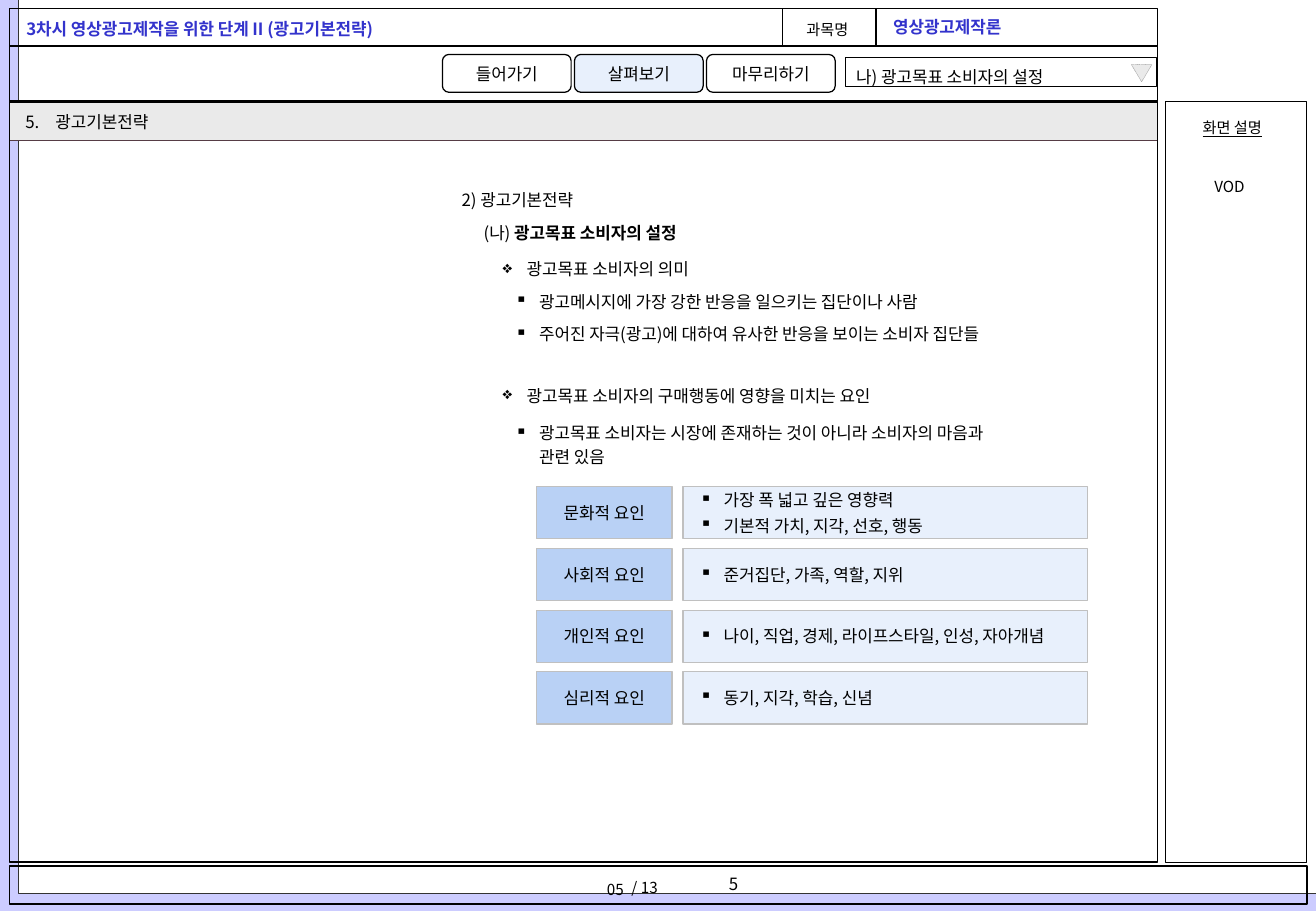
from dataclasses import dataclass
from typing import Optional

import pptx
import pptx.dml.color
import pptx.enum.dml
import pptx.enum.shapes
import pptx.enum.text
import pptx.oxml.ns
import pptx.util
from lxml import etree

Cm = pptx.util.Cm
Pt = pptx.util.Pt
RGBColor = pptx.dml.color.RGBColor
SHAPE = pptx.enum.shapes.MSO_SHAPE
ALIGN = pptx.enum.text.PP_ALIGN
ANCHOR = pptx.enum.text.MSO_ANCHOR
qn = pptx.oxml.ns.qn

FONT = "Noto Sans CJK KR"
BLACK = RGBColor(0x00, 0x00, 0x00)
WHITE = RGBColor(0xFF, 0xFF, 0xFF)
LAVENDER = RGBColor(0xCC, 0xCC, 0xFF)
CHARCOAL = RGBColor(0x33, 0x33, 0x33)
INDIGO = RGBColor(0x33, 0x33, 0xCC)
LIGHT_GRAY = RGBColor(0xEA, 0xEA, 0xEA)
MID_GRAY = RGBColor(0x96, 0x96, 0x96)
SILVER = RGBColor(0xC0, 0xC0, 0xC0)
PLUM = RGBColor(0x56, 0x3C, 0x45)
PALE_BLUE = RGBColor(0xE8, 0xF0, 0xFC)
SKY_BLUE = RGBColor(0xB9, 0xD1, 0xF5)
TIGHT, LOOSE = Pt(12), Pt(14.2)


@dataclass
class Box:
    left: float
    top: float
    width: float
    height: float
    fill: Optional[RGBColor] = None
    line: Optional[RGBColor] = BLACK
    weight: float = 1
    kind: int = SHAPE.RECTANGLE


@dataclass
class Style:
    size: float = 10
    color: RGBColor = BLACK
    bold: bool = False
    underline: bool = False
    align: int = ALIGN.LEFT
    spacing: int = TIGHT
    before: float = 5
    bullet: Optional[str] = None
    number: Optional[int] = None
    hanging: float = 0.5


@dataclass
class Label:
    left: float
    top: float
    width: float
    height: float
    lines: list[str]
    style: Style
    wrap: bool = True
    right_inset: float = 0.25
    bold_tail: str = ""


PANELS = [
    Box(0, 0, 27.51, 19.05, LAVENDER, None),
    Box(0.38, -0.18, 27.33, 18.87, WHITE, CHARCOAL, 0.75),
    Box(0.2, 2.13, 24, 0.81, LIGHT_GRAY, PLUM, 0.25),
    Box(0.2, 18.11, 27.13, 0.79),
    Box(0.2, 2.13, 24, 15.9),
    Box(24.36, 2.13, 2.95, 15.9, weight=0.75),
    Box(0.2, 0.18, 24, 0.79),
    Box(16.36, 0.18, 1.96, 0.79),
    Box(0.2, 0.97, 24, 1.14),
    Box(17.68, 1.19, 6.5, 0.61, WHITE, BLACK, 0.25),
]

TITLE = "3차시 영상광고제작을 위한 단계 II (광고기본전략)"
HEADING = Style(color=INDIGO, bold=True)
COURSE = Style(color=INDIGO, bold=True, spacing=LOOSE)
BODY = Style(spacing=LOOSE)
DIAMOND = Style(spacing=LOOSE, bullet="❖")
SQUARE = Style(spacing=LOOSE, bullet="▪")
CENTERED = Style(align=ALIGN.CENTER)
FACTOR = Style(bullet="▪", before=3)

LABELS = [
    Label(24.89, 2.31, 1.96, 0.64, ["화면 설명"], Style(9, underline=True), False),
    Label(14.99, 18.14, 1.4, 0.69, ["5"], Style(), False),
    Label(12.88, 18.19, 1.12, 0.64, ["/ 13"], Style(9, align=ALIGN.RIGHT), False),
    Label(12.37, 18.16, 0.99, 0.71, ["05"],
          Style(9, align=ALIGN.CENTER, spacing=LOOSE)),
    Label(18.42, 0.15, 5.74, 0.79, ["영상광고제작론"], COURSE),
    Label(16.61, 0.25, 1.47, 0.64, ["과목명"], Style(9), False),
    Label(24, 3.53, 3.15, 0.64, ["VOD"], Style(9, align=ALIGN.CENTER),
          right_inset=0),
    Label(17.65, 1.18, 6, 0.76, ["나) 광고목표 소비자의 설정"], BODY),
    Label(0.28, 2.13, 14.07, 0.76, ["광고기본전략"],
          Style(spacing=LOOSE, number=5, hanging=0.63)),
    Label(9.4, 3.76, 14.68, 0.76, ["2) 광고기본전략"], BODY),
    Label(9.86, 4.45, 14.2, 0.76, ["(나) "], BODY,
          bold_tail="광고목표 소비자의 설정"),
    Label(10.26, 5.21, 13.8, 0.76, ["광고목표 소비자의 의미"], DIAMOND),
    Label(10.26, 7.85, 13.8, 0.76,
          ["광고목표 소비자의 구매행동에 영향을 미치는 요인"], DIAMOND),
    Label(10.52, 5.89, 12.55, 1.5,
          ["광고메시지에 가장 강한 반응을 일으키는 집단이나 사람",
           "주어진 자극(광고)에 대하여 유사한 반응을 보이는 소비자 집단들"], SQUARE),
    Label(10.52, 8.64, 12.55, 1.3,
          ["광고목표 소비자는 시장에 존재하는 것이 아니라 소비자의 마음과\v관련 있음"],
          SQUARE),
]

TABS = [("들어가기", WHITE), ("살펴보기", PALE_BLUE), ("마무리하기", WHITE)]
FACTORS = [
    ("문화적 요인", ["가장 폭 넓고 깊은 영향력", "기본적 가치, 지각, 선호, 행동"]),
    ("사회적 요인", ["준거집단, 가족, 역할, 지위"]),
    ("개인적 요인", ["나이, 직업, 경제, 라이프스타일, 인성, 자아개념"]),
    ("심리적 요인", ["동기, 지각, 학습, 신념"]),
]


def format_run(r, style: Style) -> None:
    r.font.size = Pt(style.size)
    r.font.bold = style.bold
    r.font.underline = style.underline
    r.font.color.rgb = style.color
    r.font.name = FONT
    etree.SubElement(r.font._element, qn("a:ea"), typeface=FONT)


def add_bullet(p, style: Style) -> None:
    pPr = p._p.get_or_add_pPr()
    pPr.set("marL", str(Cm(style.hanging)))
    pPr.set("indent", str(-Cm(style.hanging)))
    if style.bullet:
        etree.SubElement(pPr, qn("a:buChar"), char=style.bullet)
    else:
        etree.SubElement(pPr, qn("a:buAutoNum"), type="arabicPeriod",
                         startAt=str(style.number))


def write(tf, lines: list[str], style: Style, wrap: bool = True,
          anchor: int = ANCHOR.TOP, left: float = 0.25, right: float = 0.25) -> None:
    tf.auto_size = pptx.enum.text.MSO_AUTO_SIZE.NONE
    tf.word_wrap = wrap
    tf.vertical_anchor = anchor
    tf.margin_left, tf.margin_right = Cm(left), Cm(right)
    tf.margin_top = tf.margin_bottom = Cm(0.13)
    tf.text = "\n".join(lines)
    for i, p in enumerate(tf.paragraphs):
        if style.bullet or style.number:
            add_bullet(p, style)
        p.alignment = style.align
        p.line_spacing = style.spacing
        p.space_before = Pt(style.before if i else 0)
        for r in p.runs:
            format_run(r, style)


def draw_box(slide, box: Box):
    sp = slide.shapes.add_shape(box.kind, Cm(box.left), Cm(box.top),
                                Cm(box.width), Cm(box.height))
    sp.shadow.inherit = False
    if box.fill is None:
        sp.fill.background()
    else:
        sp.fill.solid()
        sp.fill.fore_color.rgb = box.fill
    if box.line is None:
        sp.line.fill.background()
    else:
        sp.line.color.rgb = box.line
        sp.line.width = Pt(box.weight)
    return sp


def draw_label(slide, label: Label) -> None:
    sp = slide.shapes.add_textbox(Cm(label.left), Cm(label.top),
                                  Cm(label.width), Cm(label.height))
    write(sp.text_frame, label.lines, label.style, label.wrap,
          right=label.right_inset)
    if label.bold_tail:
        r = sp.text_frame.paragraphs[0].add_run()
        r.text = label.bold_tail
        format_run(r, Style(bold=True))


def draw_title(slide) -> None:
    sp = slide.shapes.title
    slide.shapes._spTree.append(sp._element)
    sp.left, sp.top, sp.width, sp.height = Cm(0.3), Cm(0.25), Cm(12.6), Cm(0.69)
    write(sp.text_frame, [TITLE], HEADING)


def main() -> None:
    prs = pptx.Presentation()
    prs.slide_width, prs.slide_height = Cm(27.51), Cm(19.05)
    slide = prs.slides.add_slide(prs.slide_layouts[5])

    for panel in PANELS:
        draw_box(slide, panel)
    arrow = draw_box(slide, Box(23.65, 1.35, 0.43, 0.36, LIGHT_GRAY, MID_GRAY, 0.25,
                                SHAPE.ISOSCELES_TRIANGLE))
    arrow.rotation = 180
    arrow.line.dash_style = pptx.enum.dml.MSO_LINE.ROUND_DOT
    draw_title(slide)

    for i, (name, fill) in enumerate(TABS):
        sp = draw_box(slide, Box(9.25 + 2.76 * i, 1.14, 2.69, 0.79, fill, BLACK, 0.75,
                                 SHAPE.ROUNDED_RECTANGLE))
        write(sp.text_frame, [name], CENTERED, False, ANCHOR.MIDDLE)

    for i, (name, details) in enumerate(FACTORS):
        top = 10.18 + 1.29 * i
        sp = draw_box(slide, Box(11.21, top, 2.84, 1.09, SKY_BLUE, SILVER, 0.75))
        write(sp.text_frame, [name], CENTERED, True, ANCHOR.MIDDLE, 0.05, 0.05)
        sp = draw_box(slide, Box(14.28, top, 8.46, 1.09, PALE_BLUE, SILVER, 0.75))
        write(sp.text_frame, details, FACTOR, True, ANCHOR.MIDDLE, 0.35, 0.3)

    for label in LABELS:
        draw_label(slide, label)
    prs.save("out.pptx")


if __name__ == "__main__":
    main()
